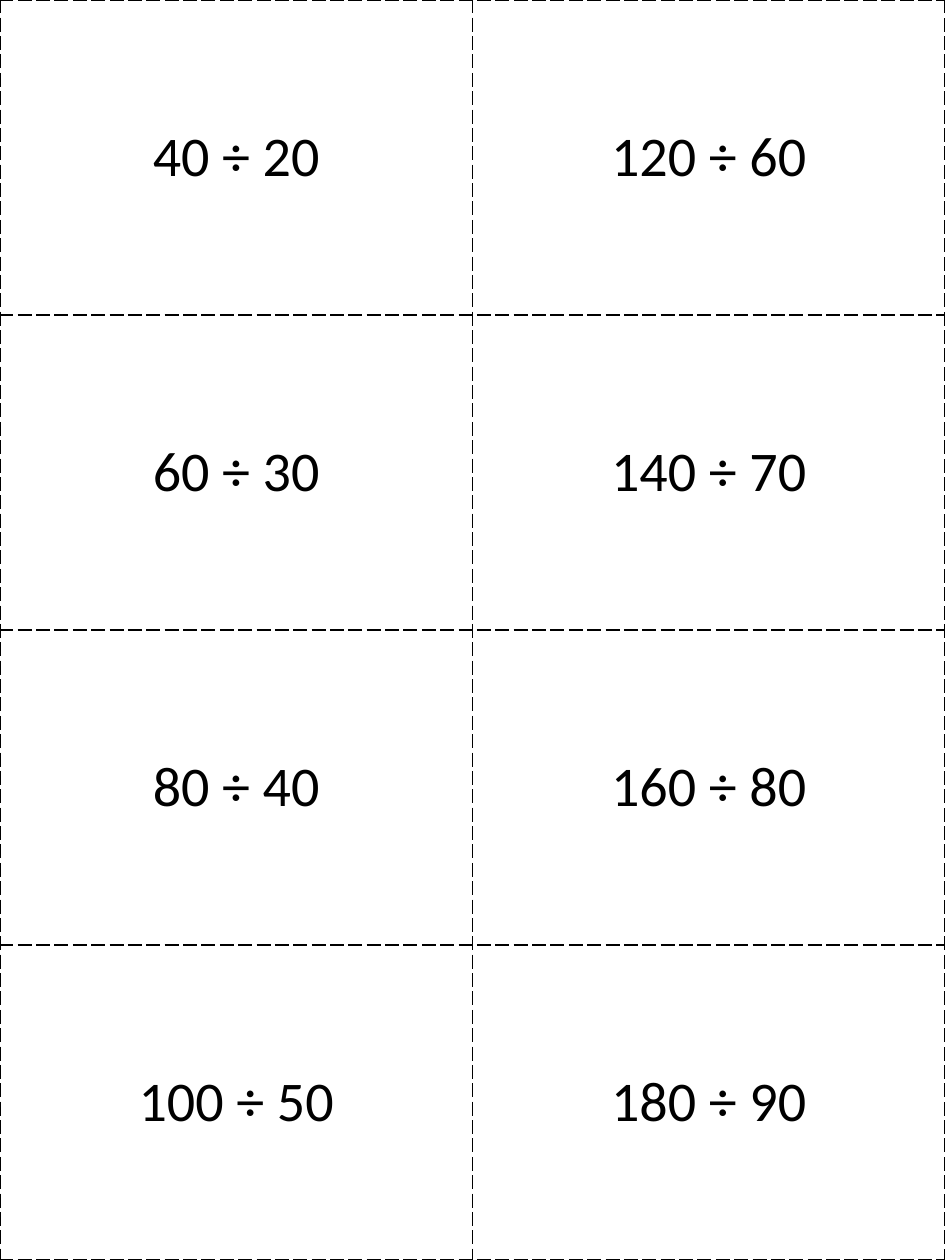
"""Build a sheet of eight division flash cards with dashed cutting lines."""
from lxml.etree import SubElement
from pptx import Presentation
from pptx.dml.color import RGBColor
from pptx.enum.text import MSO_ANCHOR as Anchor, PP_ALIGN as Align
from pptx.oxml.ns import qn
from pptx.util import Pt

BLACK = RGBColor(0x00, 0x00, 0x00)
WIDTH, HEIGHT = 540, 720
ROWS, COLUMNS = 4, 2


def add_dashed_borders(cell):
    properties = cell._tc.get_or_add_tcPr()
    for side in ("a:lnL", "a:lnR", "a:lnT", "a:lnB"):
        border = SubElement(properties, qn(side), w=str(Pt(1)))
        paint = SubElement(border, qn("a:solidFill"))
        SubElement(paint, qn("a:srgbClr"), val=str(BLACK))
        SubElement(border, qn("a:prstDash"), val="lgDash")


deck = Presentation()
deck.slide_width, deck.slide_height = Pt(WIDTH), Pt(HEIGHT)
sheet = deck.slides.add_slide(deck.slide_layouts[6])

cards = sheet.shapes.add_table(ROWS, COLUMNS, 0, 0, Pt(WIDTH), Pt(HEIGHT)).table
cards.first_row = False
cards.horz_banding = False

for column in range(COLUMNS):
    for row in range(ROWS):
        divisor = 20 + 10 * (column * ROWS + row)
        card = cards.cell(row, column)
        add_dashed_borders(card)
        card.fill.background()
        card.vertical_anchor = Anchor.MIDDLE
        problem = card.text_frame.paragraphs[0]
        problem.alignment = Align.CENTER
        division = problem.add_run()
        division.text = f"{2 * divisor} ÷ {divisor}"
        division.font.name = "Calibri"
        division.font.size = Pt(32)
        division.font.color.rgb = BLACK

deck.save("out.pptx")
